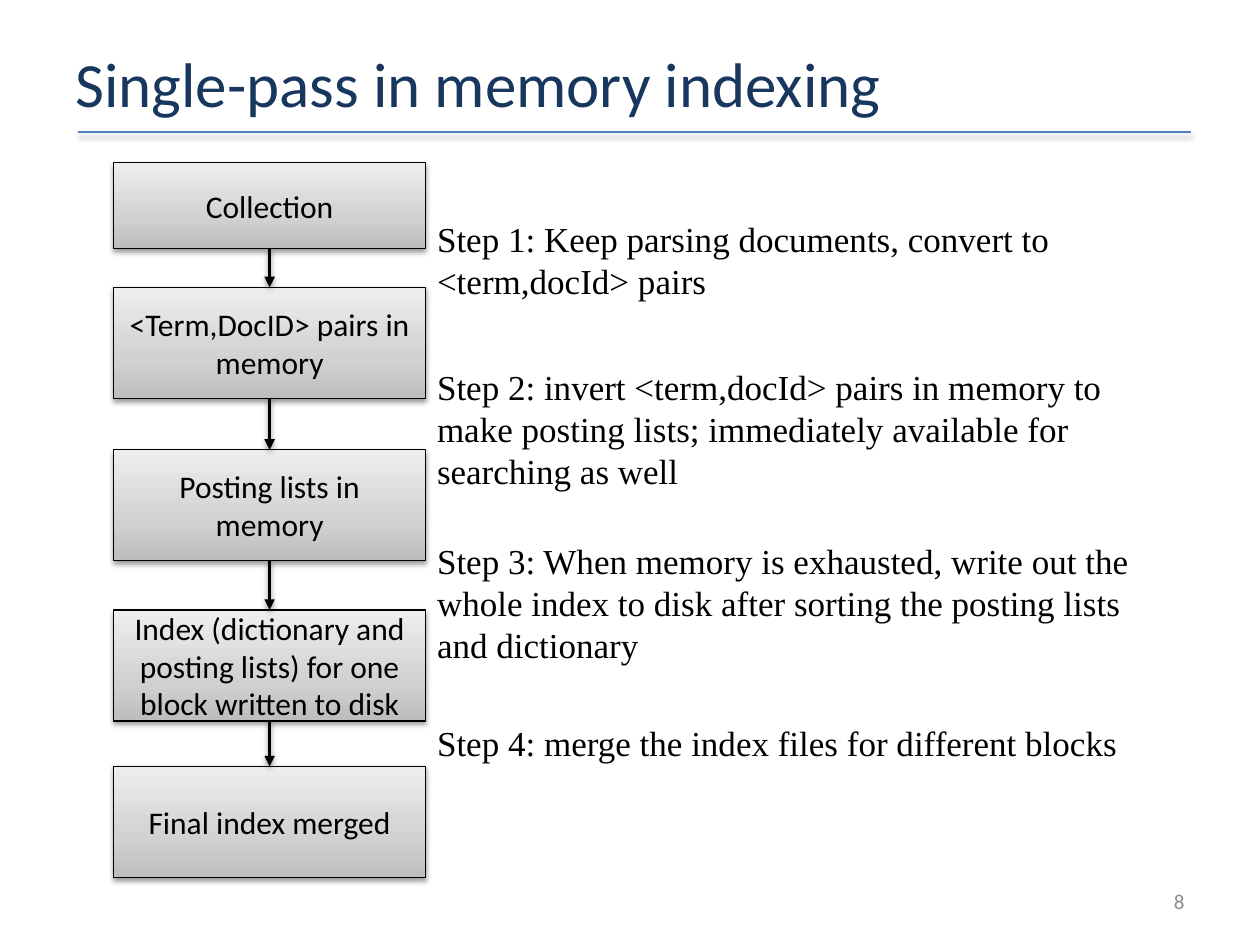
from copy import deepcopy
from itertools import pairwise

from lxml.etree import SubElement
from pptx import Presentation
from pptx.dml.color import RGBColor
from pptx.enum.shapes import MSO_CONNECTOR, MSO_SHAPE
from pptx.enum.text import MSO_ANCHOR, MSO_AUTO_SIZE, PP_ALIGN
from pptx.oxml.ns import qn
from pptx.util import Inches, Pt

W, H = Inches(10), Inches(7.5)
COLORS = {
    "title": "17375E",
    "rule": "4F81BD",
    "ink": "000000",
    "number": "8C8C8C",
    "dark": "BDBDBD",
    "mid": "D1D1D1",
    "light": "EEEEEE",
}
BOX_LEFT, BOX_WIDTH = 9, 24.8
STEP_LEFT, STEP_WIDTH = 33.7, 60.1
STAGES = [
    ("Collection", 17.2, 9.1),
    ("<Term,DocID> pairs in memory", 30.4, 11.75),
    ("Posting lists in memory", 47.6, 11.75),
    ("Index (dictionary and posting lists) for one block written to disk", 64.55, 11.75),
    ("Final index merged", 81.1, 11.75),
]
STEPS = [
    ("Step 1: Keep parsing documents, convert to <term,docId> pairs", 22.4, 10.3),
    ("Step 2: invert <term,docId> pairs in memory to make posting lists; "
     "immediately available for searching as well", 38, 14.8),
    ("Step 3: When memory is exhausted, write out the whole index to disk "
     "after sorting the posting lists and dictionary", 56.4, 14.8),
    ("Step 4: merge the index files for different blocks", 75.75, 5.9),
]


def rgb(name):
    return RGBColor.from_string(COLORS[name])


def place(left, top, width, height):
    return [int(size * share / 100) for size, share in zip((W, H, W, H), (left, top, width, height))]


def write(sp, text, size, font, color, align, anchor):
    tf = sp.text_frame
    tf.word_wrap = True
    tf.vertical_anchor = anchor
    p = tf.paragraphs[0]
    p.text = text
    p.alignment = align
    p.font.size = Pt(size)
    p.font.name = font
    p.font.color.rgb = rgb(color)


def add_text(s, text, area, size, font="Calibri", color="ink",
             align=PP_ALIGN.LEFT, anchor=MSO_ANCHOR.MIDDLE):
    sp = s.shapes.add_textbox(*place(*area))
    write(sp, text, size, font, color, align, anchor)
    return sp


def add_shadow(sp):
    effects = SubElement(sp._element.spPr, qn("a:effectLst"))
    shadow = SubElement(effects, qn("a:outerShdw"), blurRad="40000", dist="20000",
                        dir="5400000", rotWithShape="0")
    color = SubElement(shadow, qn("a:srgbClr"), val=COLORS["ink"])
    SubElement(color, qn("a:alpha"), val="38000")


def fill_gradient(sp):
    sp.fill.gradient()
    sp.fill.gradient_angle = 90
    stops = sp._element.spPr.find(".//" + qn("a:gsLst"))
    stops.insert(1, deepcopy(stops[0]))
    for stop, (position, color) in zip(
            sp.fill.gradient_stops, [(0, "dark"), (0.35, "mid"), (1, "light")]):
        stop.position = position
        stop.color.rgb = rgb(color)


def add_stage(s, text, top, height):
    sp = s.shapes.add_shape(MSO_SHAPE.RECTANGLE, *place(BOX_LEFT, top, BOX_WIDTH, height))
    fill_gradient(sp)
    sp.line.color.rgb = rgb("ink")
    sp.line.width = Pt(0.75)
    add_shadow(sp)
    write(sp, text, 18, "Calibri", "ink", PP_ALIGN.CENTER, MSO_ANCHOR.MIDDLE)
    return sp


def add_line(s, ends, color, width):
    line = s.shapes.add_connector(MSO_CONNECTOR.STRAIGHT, *place(*ends))
    line.line.color.rgb = rgb(color)
    line.line.width = Pt(width)
    add_shadow(line)
    return line


def add_arrow(s, upper, lower):
    arrow = add_line(s, (0, 0, 0, 0), "ink", 2)
    arrow.begin_connect(upper, 2)
    arrow.end_connect(lower, 0)
    SubElement(arrow.line._get_or_add_ln(), qn("a:tailEnd"), type="triangle")


def add_step(s, text, top, height):
    sp = add_text(s, text, (STEP_LEFT, top, STEP_WIDTH, height), 20,
                  "Times New Roman", anchor=MSO_ANCHOR.TOP)
    sp.text_frame.auto_size = MSO_AUTO_SIZE.SHAPE_TO_FIT_TEXT


def main():
    prs = Presentation()
    prs.slide_width, prs.slide_height = W, H
    s = prs.slides.add_slide(prs.slide_layouts[6])
    add_line(s, (6.2, 14, 94.5, 14), "rule", 1)
    add_text(s, "Single-pass in memory indexing", (5, 4, 90, 9.5), 36, color="title")
    add_text(s, "8", (71.7, 92.7, 23.3, 5.3), 12, color="number", align=PP_ALIGN.RIGHT)
    boxes = [add_stage(s, *stage) for stage in STAGES]
    for upper, lower in pairwise(boxes):
        add_arrow(s, upper, lower)
    for step in STEPS:
        add_step(s, *step)
    prs.save("out.pptx")


if __name__ == "__main__":
    main()
